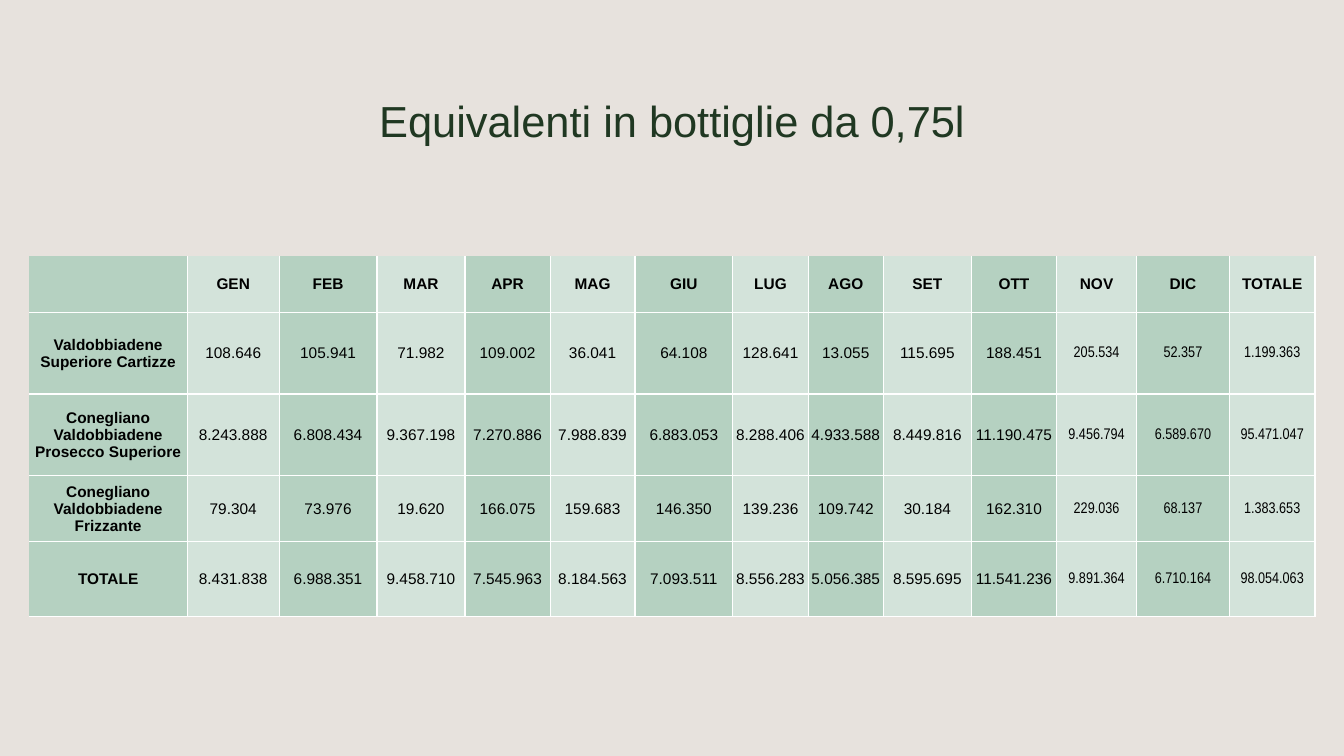
from lxml import etree
from pptx import Presentation
from pptx.dml.color import RGBColor
from pptx.enum import text as tx
from pptx.oxml import ns
from pptx.util import Pt


class Theme:
    back = RGBColor.from_string("E7E2DD")
    title = RGBColor.from_string("203822")
    ink = RGBColor.from_string("000000")
    bands = [RGBColor.from_string(c) for c in ("B5D1C1", "D3E3DA")]
    rule = "FFFFFF"
    font = "Arial"
    slim = "Arial Narrow"
    head = Pt(31)
    body = Pt(11)


def add_run(para, words, font, size, color, bold=False):
    run = para.add_run()
    run.text = words
    run.font.name = font
    run.font.size = size
    run.font.bold = bold
    run.font.color.rgb = color


def add_edge(cell, side, shown):
    """Draw one cell border in white, or switch it off."""
    props = cell._tc.get_or_add_tcPr()
    line = etree.SubElement(props, ns.qn(f"a:ln{side}"), w=str(Pt(1)))
    if shown:
        fill = etree.SubElement(line, ns.qn("a:solidFill"))
        etree.SubElement(fill, ns.qn("a:srgbClr"), val=Theme.rule)
    else:
        etree.SubElement(line, ns.qn("a:noFill"))


rows = [
    ["", "GEN", "FEB", "MAR", "APR", "MAG", "GIU", "LUG", "AGO", "SET",
     "OTT", "NOV", "DIC", "TOTALE"],
    ["Valdobbiadene Superiore Cartizze", "108.646", "105.941", "71.982",
     "109.002", "36.041", "64.108", "128.641", "13.055", "115.695",
     "188.451", "205.534", "52.357", "1.199.363"],
    ["Conegliano Valdobbiadene Prosecco Superiore", "8.243.888", "6.808.434",
     "9.367.198", "7.270.886", "7.988.839", "6.883.053", "8.288.406",
     "4.933.588", "8.449.816", "11.190.475", "9.456.794", "6.589.670",
     "95.471.047"],
    ["Conegliano Valdobbiadene Frizzante", "79.304", "73.976", "19.620",
     "166.075", "159.683", "146.350", "139.236", "109.742", "30.184",
     "162.310", "229.036", "68.137", "1.383.653"],
    ["TOTALE", "8.431.838", "6.988.351", "9.458.710", "7.545.963",
     "8.184.563", "7.093.511", "8.556.283", "5.056.385", "8.595.695",
     "11.541.236", "9.891.364", "6.710.164", "98.054.063"],
]
widths = [113.2, 65.5, 70, 62.8, 60.9, 60.5, 70, 53.8, 53.8, 62.8, 61, 57,
          66.5, 61]
heights = [40.3, 58.5, 58.5, 47, 53.3]
first_slim = rows[0].index("NOV")

deck = Presentation()
deck.slide_width, deck.slide_height = Pt(960), Pt(540)
slide = deck.slides.add_slide(deck.slide_layouts[5])
slide.background.fill.solid()
slide.background.fill.fore_color.rgb = Theme.back

title = slide.shapes.title
title.left, title.top, title.width, title.height = Pt(66), Pt(47.5), Pt(828), Pt(81.5)
title.text_frame.vertical_anchor = tx.MSO_ANCHOR.MIDDLE
para = title.text_frame.paragraphs[0]
para.alignment = tx.PP_ALIGN.CENTER
para.line_spacing = 0.9
add_run(para, "Equivalenti in bottiglie da 0,75l", Theme.font, Theme.head, Theme.title)

frame = slide.shapes.add_table(len(rows), len(widths), Pt(20.7), Pt(182.7),
                               Pt(sum(widths)), Pt(sum(heights)))
table = frame.table
table.first_row = table.horz_banding = False
for col, width in zip(table.columns, widths):
    col.width = Pt(width)
for row, height in zip(table.rows, heights):
    row.height = Pt(height)

for r, row in enumerate(rows):
    for c, words in enumerate(row):
        cell = table.cell(r, c)
        for side, shown in (("L", c > 0), ("R", True), ("T", r > 0), ("B", True)):
            add_edge(cell, side, shown)
        cell.fill.solid()
        cell.fill.fore_color.rgb = Theme.bands[c % 2]
        cell.vertical_anchor = tx.MSO_ANCHOR.MIDDLE
        cell.margin_left = cell.margin_right = cell.margin_top = Pt(0.7)
        cell.margin_bottom = Pt(0)
        if words:
            para = cell.text_frame.paragraphs[0]
            para.alignment = tx.PP_ALIGN.CENTER
            label = r == 0 or c == 0
            font = Theme.slim if c >= first_slim and not label else Theme.font
            add_run(para, words, font, Theme.body, Theme.ink, label)

deck.save("out.pptx")
